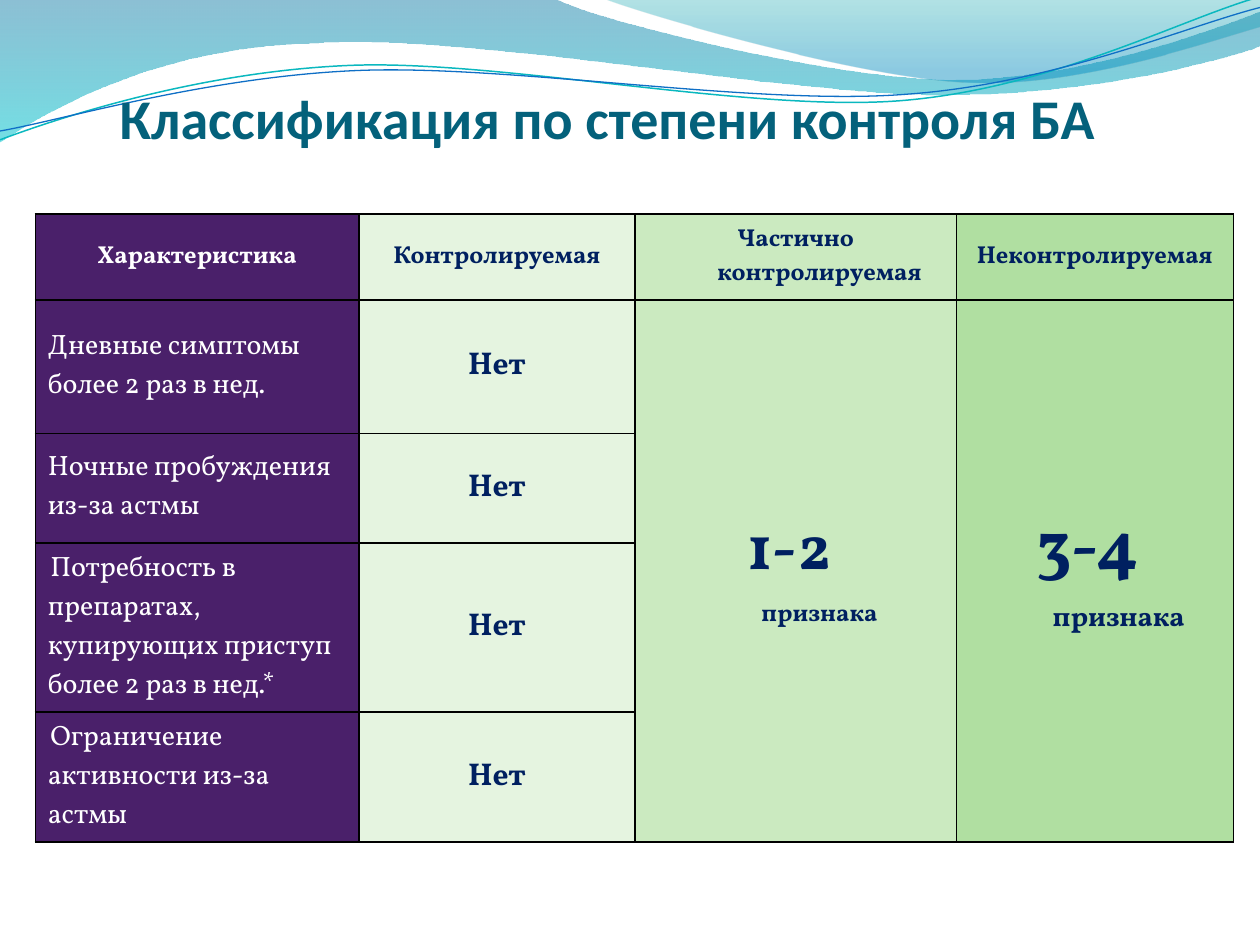
"""Build the slide on asthma control levels: wave header, title and table."""
from dataclasses import dataclass
from math import cos, radians, sin

from lxml import etree
from pptx import Presentation
from pptx.dml.color import RGBColor
from pptx.enum.text import MSO_ANCHOR, PP_ALIGN
from pptx.oxml.ns import qn
from pptx.util import Inches, Pt

MIDDLE = MSO_ANCHOR.MIDDLE
CENTER = PP_ALIGN.CENTER
LEFT = PP_ALIGN.LEFT
NAVY, WHITE, PURPLE = "002060", "FFFFFF", "4A206A"
GREENS = ("E5F4E0", "CBEAC0", "B0DFA1")
HANGING = (0.38, -0.38)
UNITS = 1000
TILT = 357.3


@dataclass
class Stop:
    pos: float
    color: str
    alpha: int


@dataclass
class Wave:
    """A path whose segments hold one point (line) or three (Bezier curve)."""
    start: tuple
    segments: list
    stops: tuple = ()
    line: str = ""
    width: float = 0
    center: tuple = (0, 0)
    rotation: float = 0


@dataclass
class Cell:
    row: int
    col: int
    lines: list
    fill: str
    color: str = NAVY
    bold: bool = True
    align: PP_ALIGN = CENTER
    indent: tuple = HANGING


WAVES = [
    Wave((0, 0), [
        (4.4, -0.01),
        (4.76, 0.17, 6.64, 0.63, 7.58, 0.63),
        (8.53, 0.63, 9.58, 0.26, 10, 0.09),
        (10.01, 0.36),
        (9.83, 0.44, 8.7, 0.76, 7.46, 0.75),
        (6.22, 0.75, 3.82, 0.28, 2.57, 0.34),
        (1.29, 0.36, 0.46, 0.83, -0.01, 1.13),
        (0, 0),
    ], stops=(Stop(0, "0074A1", 45), Stop(1, "00C6CF", 55))),
    Wave((4.79, -0.01), [
        (5.09, 0.11, 6.82, 0.62, 7.69, 0.65),
        (8.56, 0.69, 9.61, 0.32, 10, 0.21),
        (10, 0),
        (4.79, -0.01),
    ], stops=(Stop(0, "00A1A9", 30), Stop(0.8, "008BBF", 45))),
    Wave((0, 1.11), [
        (0.48, 0.93, 1.58, 0.57, 2.77, 0.52),
        (3.95, 0.47, 5.93, 0.89, 7.13, 0.8),
        (8.33, 0.71, 9.38, 0.15, 9.98, -0.02),
    ], line="0AB8BF", width=0.85, center=(4.99, 0.58), rotation=TILT),
    Wave((0, 1.04), [
        (0.47, 0.96, 1.64, 0.61, 2.83, 0.56),
        (4.03, 0.51, 5.97, 0.84, 7.17, 0.75),
        (8.36, 0.67, 9.41, 0.21, 10, 0.06),
    ], line="0F6FC6", width=0.75, center=(5, 0.59), rotation=TILT),
]
COLS = (2.57, 2.19, 2.55, 2.2)
ROWS = (0.68, 1.06, 0.87, 1.28, 0.98)
HEADERS = ("Характеристика", "Контролируемая", "Частично контролируемая",
           "Неконтролируемая")
SIGNS = (
    ("Дневные симптомы более 2 раз в нед.", 0),
    ("Ночные пробуждения из-за астмы", 0),
    ("Потребность в препаратах, купирующих приступ более 2 раз в нед.*", 0.02),
    ("Ограничение активности из-за астмы", 0.02),
)
COUNTS = ([("1-2 ", 36), ("признака", 14)], [("3-4 ", 40), ("признака", 16)])


def rgb(color: str) -> RGBColor:
    """Turn a hex string into a colour."""
    return RGBColor.from_string(color)


def level_point(wave: Wave, x: float, y: float) -> tuple:
    """Return a point in path units with the wave's rotation undone."""
    a = radians(-wave.rotation)
    cx, cy = wave.center
    dx, dy = x - cx, y - cy
    return (round((cx + dx * cos(a) - dy * sin(a)) * UNITS),
            round((cy + dx * sin(a) + dy * cos(a)) * UNITS))


def curve_path(sp, segments: list) -> None:
    """Join each curve's three points into one Bezier segment."""
    lines = iter(list(sp._element.spPr.iter(qn("a:lnTo"))))
    for seg in segments:
        first = next(lines)
        if len(seg) == 2:
            continue
        curve = etree.Element(qn("a:cubicBezTo"))
        first.addprevious(curve)
        for ln in (first, next(lines), next(lines)):
            curve.append(ln[0])
            ln.getparent().remove(ln)


def add_wave(s, wave: Wave) -> None:
    """Draw one filled or outlined wave."""
    pts = [level_point(wave, *seg[i:i + 2]) for seg in (wave.start, *wave.segments)
           for i in range(0, len(seg), 2)]
    fb = s.shapes.build_freeform(*pts[0], scale=Inches(1) / UNITS)
    fb.add_line_segments(pts[1:], close=bool(wave.stops))
    sp = fb.convert_to_shape()
    curve_path(sp, wave.segments)
    sp.rotation = wave.rotation
    sp.shadow.inherit = False
    if not wave.stops:
        sp.fill.background()
        sp.line.color.rgb = rgb(wave.line)
        sp.line.width = Pt(wave.width)
        return
    sp.line.fill.background()
    sp.fill.gradient()
    sp.fill.gradient_angle = 270
    for gs, stop in zip(sp.fill.gradient_stops, wave.stops):
        gs.position = stop.pos
        gs.color.rgb = rgb(stop.color)
    for clr, stop in zip(sp._element.spPr.iter(qn("a:srgbClr")), wave.stops):
        etree.SubElement(clr, qn("a:alpha"), val=str(stop.alpha * 1000))


def add_run(p, text: str, size: float, color: str, bold: bool, font: str) -> None:
    """Add one formatted run to a paragraph."""
    r = p.add_run()
    r.text = text
    r.font.size = Pt(size)
    r.font.name = font
    r.font.bold = bold
    r.font.color.rgb = rgb(color)


def set_borders(tc) -> None:
    """Give a table cell thin black lines on all four sides."""
    tcPr = tc.get_or_add_tcPr()
    for side in ("lnL", "lnR", "lnT", "lnB"):
        ln = etree.SubElement(tcPr, qn(f"a:{side}"), w=str(Pt(1)))
        fill = etree.SubElement(ln, qn("a:solidFill"))
        etree.SubElement(fill, qn("a:srgbClr"), val="000000")


def fill_cell(tbl, item: Cell) -> None:
    """Write and format one table cell."""
    cell = tbl.cell(item.row, item.col)
    cell.fill.solid()
    cell.fill.fore_color.rgb = rgb(item.fill)
    cell.vertical_anchor = MIDDLE
    p = cell.text_frame.paragraphs[0]
    p.alignment = item.align
    pPr = p._p.get_or_add_pPr()
    for name, value in zip(("marL", "indent"), item.indent):
        pPr.set(name, str(Inches(value)))
    for i, (text, size) in enumerate(item.lines):
        if i:
            p.add_line_break()
        add_run(p, text, size, item.color, item.bold, "Vollkorn")


def table_cells() -> list:
    """List the header, sign, answer and count cells."""
    cells = [Cell(0, c, [(text, 14)], fill, WHITE if c == 0 else NAVY)
             for c, (text, fill) in enumerate(zip(HEADERS, (PURPLE, *GREENS)))]
    for row, (text, indent) in enumerate(SIGNS, 1):
        cells.append(Cell(row, 0, [(text, 16)], PURPLE, WHITE, False, LEFT, (0, indent)))
        cells.append(Cell(row, 1, [("Нет", 18)], GREENS[0]))
    return cells + [Cell(1, c, lines, GREENS[c - 1]) for c, lines in enumerate(COUNTS, 2)]


def add_control_table(s) -> None:
    """Add the table of signs against levels of control."""
    tbl = s.shapes.add_table(len(ROWS), len(COLS), Inches(0.28), Inches(1.7),
                             Inches(sum(COLS)), Inches(sum(ROWS))).table
    for col, width in zip(tbl.columns, COLS):
        col.width = Inches(width)
    for row, height in zip(tbl.rows, ROWS):
        row.height = Inches(height)
    for cell in tbl.iter_cells():
        set_borders(cell._tc)
    for col in (2, 3):
        tbl.cell(1, col).merge(tbl.cell(len(ROWS) - 1, col))
    for item in table_cells():
        fill_cell(tbl, item)


def set_title(s, text: str) -> None:
    """Place the title above the waves and format it."""
    sp = s.shapes.title
    s.shapes._spTree.append(sp._element)
    sp.left, sp.top, sp.width, sp.height = map(Inches, (0, 0.28, 9.65, 1.25))
    tf = sp.text_frame
    tf.margin_left = tf.margin_right = tf.margin_bottom = 0
    tf.margin_top = Inches(0.05)
    tf.vertical_anchor = MIDDLE
    tf.word_wrap = True
    p = tf.paragraphs[0]
    p.alignment = CENTER
    add_run(p, text, 32, "04617B", True, "Calibri")


def main() -> None:
    """Build and save the slide."""
    prs = Presentation()
    prs.slide_width, prs.slide_height = Inches(10), Inches(7.5)
    s = prs.slides.add_slide(prs.slide_layouts[5])
    for wave in WAVES:
        add_wave(s, wave)
    set_title(s, "Классификация по степени контроля БА")
    add_control_table(s)
    prs.save("out.pptx")


if __name__ == "__main__":
    main()
